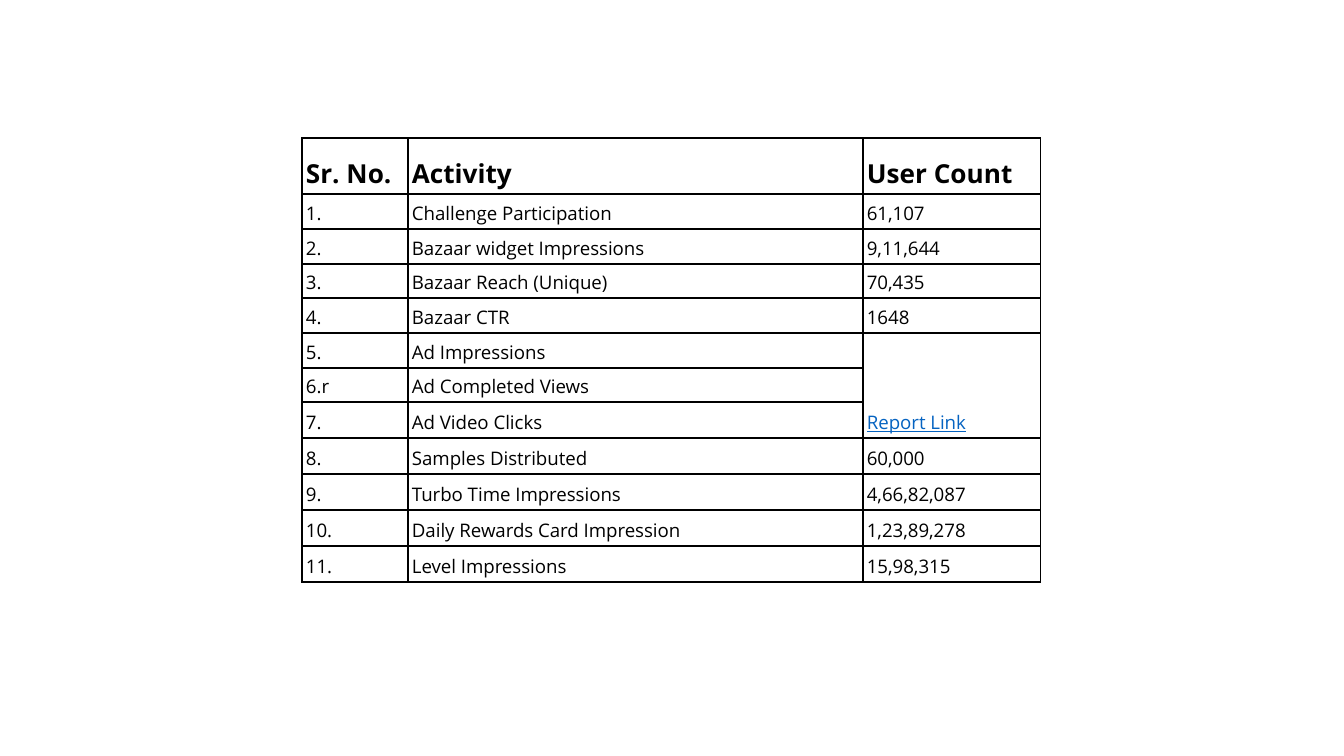
from lxml.etree import SubElement
from pptx import Presentation
from pptx.dml.color import RGBColor
from pptx.enum.text import MSO_ANCHOR
from pptx.oxml.ns import qn
from pptx.util import Emu, Pt

SCALE = 914400 / 134.4
FONT = "Open Sans"
COLORS = {"text": "000000", "border": "000000", "cell": "FFFFFF", "link": "0563C1"}

HEADER = ("Sr. No.", "Activity", "User Count")
ACTIVITIES = [
    ("1.", "Challenge Participation", "61,107"),
    ("2.", "Bazaar widget Impressions", "9,11,644"),
    ("3.", "Bazaar Reach (Unique)", "70,435"),
    ("4.", "Bazaar CTR", "1648"),
    ("5.", "Ad Impressions", "Report Link"),
    ("6.r", "Ad Completed Views", ""),
    ("7.", "Ad Video Clicks", ""),
    ("8.", "Samples Distributed", "60,000"),
    ("9.", "Turbo Time Impressions", "4,66,82,087"),
    ("10.", "Daily Rewards Card Impression", "1,23,89,278"),
    ("11.", "Level Impressions", "15,98,315"),
]
LINK_ROWS = (5, 7)
COL_WIDTHS = (106, 455, 178)
ROW_HEIGHTS = [56] + [35, 35, 34] * 2 + [36] * 5


def px(n):
    return Emu(round(n * SCALE))


def rgb(name):
    return RGBColor.from_string(COLORS[name])


def add_borders(cell):
    tc_pr = cell._tc.get_or_add_tcPr()
    for side in ("lnL", "lnR", "lnT", "lnB"):
        ln = SubElement(tc_pr, qn(f"a:{side}"), w=str(Pt(0.75)))
        fill = SubElement(ln, qn("a:solidFill"))
        SubElement(fill, qn("a:srgbClr"), val=COLORS["border"])


def style_cell(cell):
    add_borders(cell)
    cell.fill.solid()
    cell.fill.fore_color.rgb = rgb("cell")
    cell.vertical_anchor = MSO_ANCHOR.BOTTOM
    cell.margin_left = cell.margin_right = px(4)
    cell.margin_top, cell.margin_bottom = px(2), px(3)


def write_cell(cell, text, header=False, spacing=1.15):
    p = cell.text_frame.paragraphs[0]
    p.text = text
    p.line_spacing = spacing
    is_link = text == "Report Link"
    p.font.size = Pt(10)
    for r in p.runs:
        r.font.name = FONT
        r.font.size = Pt(14 if header else 10)
        r.font.bold = header
        r.font.underline = is_link
        r.font.color.rgb = rgb("link" if is_link else "text")


def add_activity_table(slide, left, top, width, height):
    rows = [HEADER] + ACTIVITIES
    frame = slide.shapes.add_table(len(rows), len(HEADER),
                                   px(left), px(top), px(width), px(height))
    table = frame.table
    table.first_row = table.horz_banding = False
    for column, w in zip(table.columns, COL_WIDTHS):
        column.width = px(w)
    for i, (row, h, texts) in enumerate(zip(table.rows, ROW_HEIGHTS, rows)):
        row.height = px(h)
        for j, (cell, text) in enumerate(zip(row.cells, texts)):
            style_cell(cell)
            single = j == 2 and 1 <= i <= 8
            write_cell(cell, text, header=i == 0, spacing=1.0 if single else 1.15)
    first, last = LINK_ROWS
    table.cell(first, 2).merge(table.cell(last, 2))


def main():
    prs = Presentation()
    prs.slide_width, prs.slide_height = px(1344), px(756)
    slide = prs.slides.add_slide(prs.slide_layouts[6])
    add_activity_table(slide, 302, 138, sum(COL_WIDTHS), sum(ROW_HEIGHTS))
    prs.save("out.pptx")


if __name__ == "__main__":
    main()
